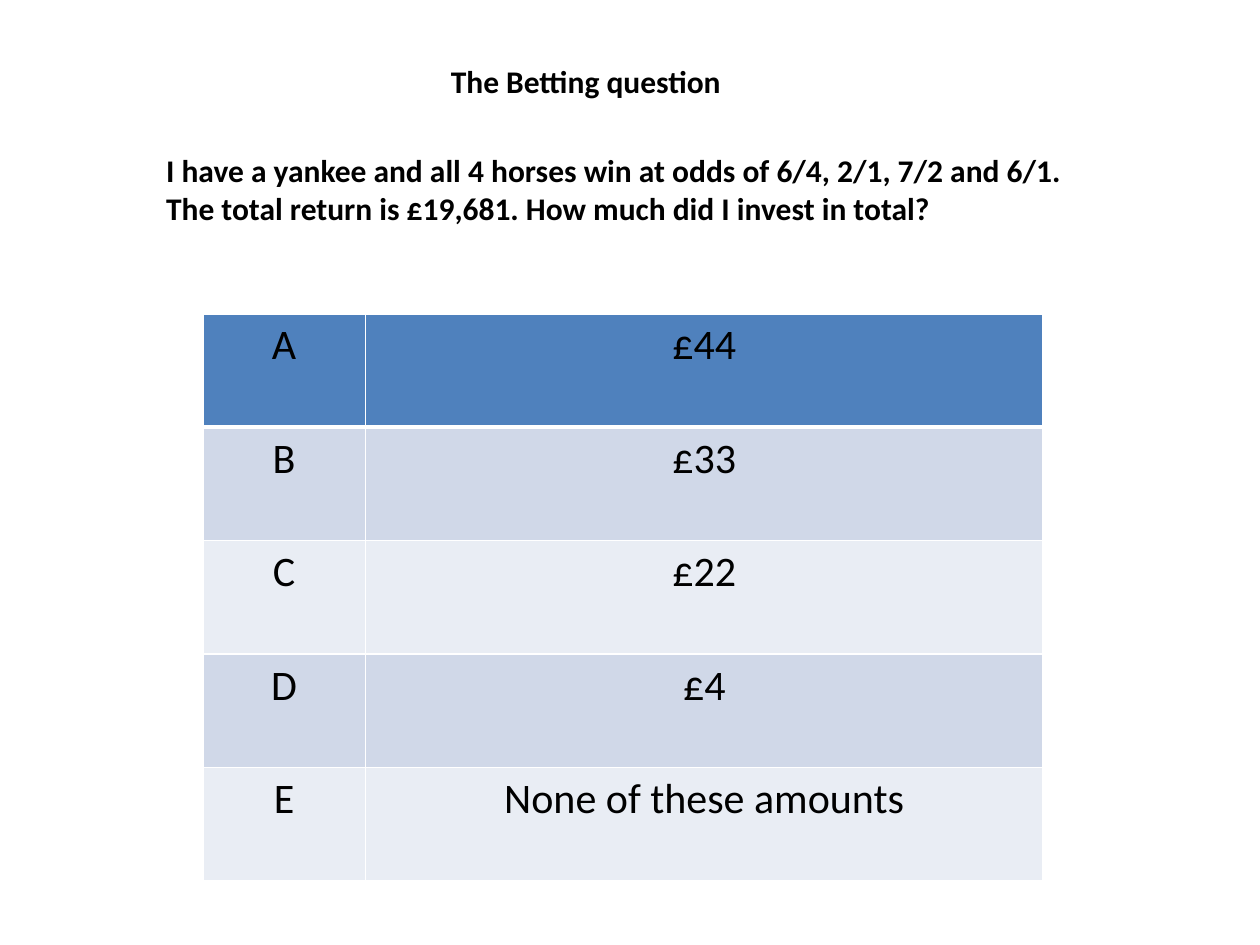
from lxml import etree
from pptx import Presentation
from pptx.dml.color import RGBColor
from pptx.enum.text import MSO_AUTO_SIZE, PP_ALIGN
from pptx.oxml.ns import qn
from pptx.util import Inches, Pt

CENTER, LEFT = PP_ALIGN.CENTER, PP_ALIGN.LEFT
FIT_SHAPE = MSO_AUTO_SIZE.SHAPE_TO_FIT_TEXT

BLACK = RGBColor(0x00, 0x00, 0x00)
WHITE = RGBColor(0xFF, 0xFF, 0xFF)
HEADER_BLUE = RGBColor(0x4F, 0x81, 0xBD)
BAND_DARK = RGBColor(0xD0, 0xD8, 0xE8)
BAND_LIGHT = RGBColor(0xE9, 0xED, 0xF4)

FONT = "Calibri"
PAGE_WIDTH, PAGE_HEIGHT = Inches(10), Inches(7.5)
COLUMN_WIDTHS = (1.29, 5.38)
ROW_HEIGHT = 0.9

QUESTION = (
    "I have a yankee and all 4 horses win at odds of 6/4, 2/1, 7/2 and 6/1. "
    "The total return is £19,681. How much did I invest in total?"
)
ANSWERS = (
    ("A", "£44"),
    ("B", "£33"),
    ("C", "£22"),
    ("D", "£4"),
    ("E", "None of these amounts"),
)


def write_text(frame, text, size, align, bold=False):
    para = frame.paragraphs[0]
    para.alignment = align
    span = para.add_run()
    span.text = text
    span.font.name = FONT
    span.font.size = Pt(size)
    span.font.bold = bold
    span.font.color.rgb = BLACK


def add_heading(page, text, left, top, width, height, align):
    box = page.shapes.add_textbox(
        Inches(left), Inches(top), Inches(width), Inches(height))
    frame = box.text_frame
    frame.word_wrap = True
    frame.auto_size = FIT_SHAPE
    write_text(frame, text, 18, align, bold=True)


def set_borders(cell, widths):
    """Draw white borders; widths maps each side (L, R, T, B) to points."""
    properties = cell._tc.get_or_add_tcPr()
    for side, width in widths.items():
        line = etree.SubElement(
            properties, qn(f"a:ln{side}"), w=str(Pt(width)))
        fill = etree.SubElement(line, qn("a:solidFill"))
        etree.SubElement(fill, qn("a:srgbClr"), val=str(WHITE))


def row_color(row):
    if row == 0:
        return HEADER_BLUE
    return BAND_DARK if row % 2 else BAND_LIGHT


def add_answer_table(page, left, top):
    table = page.shapes.add_table(
        len(ANSWERS), len(COLUMN_WIDTHS), Inches(left), Inches(top),
        Inches(sum(COLUMN_WIDTHS)), Inches(ROW_HEIGHT * len(ANSWERS))).table
    for column, width in zip(table.columns, COLUMN_WIDTHS):
        column.width = Inches(width)
    for row, answer in enumerate(ANSWERS):
        # A thick rule separates the first row from the banded rows
        widths = {"L": 1, "R": 1,
                  "T": 3 if row == 1 else 1, "B": 3 if row == 0 else 1}
        for column, text in enumerate(answer):
            cell = table.cell(row, column)
            set_borders(cell, widths)
            cell.fill.solid()
            cell.fill.fore_color.rgb = row_color(row)
            write_text(cell.text_frame, text, 24, CENTER)


def main():
    deck = Presentation()
    deck.slide_width, deck.slide_height = PAGE_WIDTH, PAGE_HEIGHT
    page = deck.slides.add_slide(deck.slide_layouts[6])

    # Answer options
    add_answer_table(page, 1.61, 2.49)

    # Question and title
    add_heading(page, QUESTION, 1.22, 1.15, 7.64, 0.71, LEFT)
    add_heading(page, "The Betting question", 2.72, 0.44, 3.86, 0.4, CENTER)

    deck.save("out.pptx")


if __name__ == "__main__":
    main()
